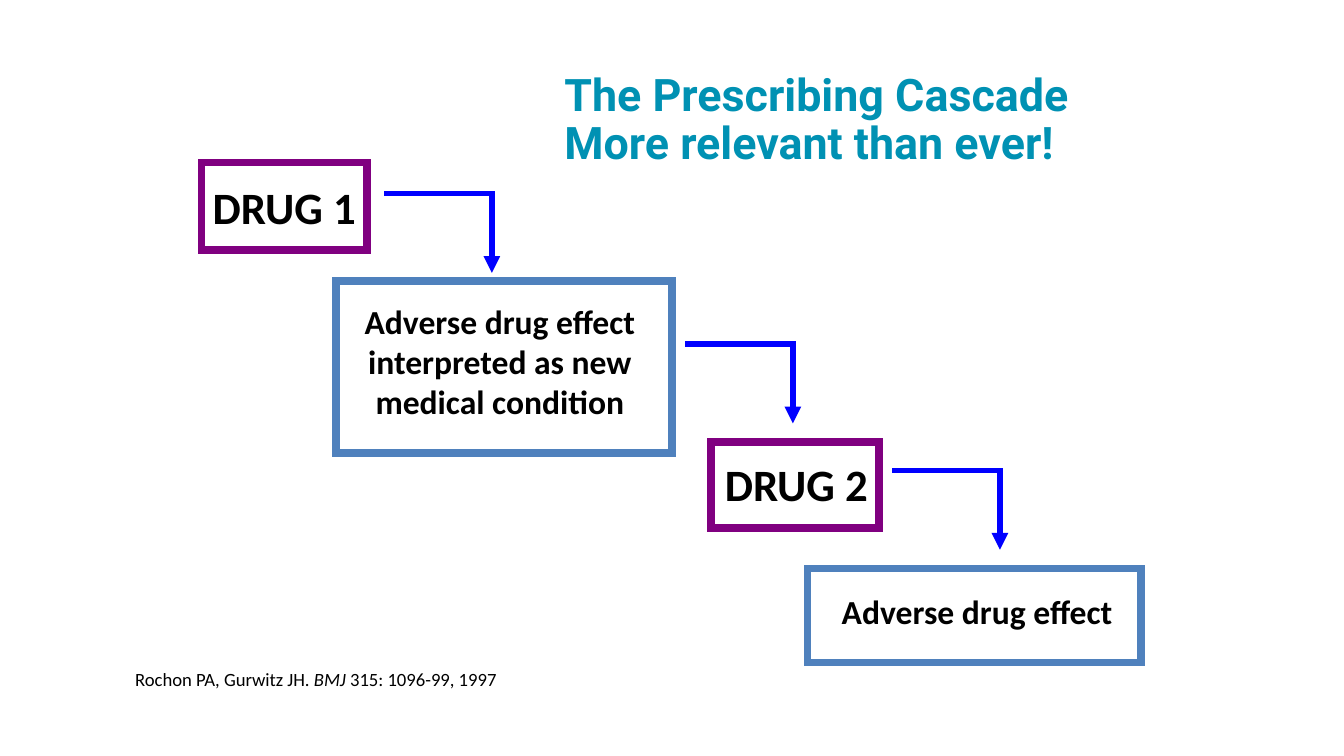
from lxml import etree
from pptx import Presentation, util as u
from pptx.dml.color import RGBColor
from pptx.enum import shapes, text
from pptx.oxml import ns

TEAL = RGBColor(0x00, 0x91, 0xB3)
PURPLE = RGBColor(0x80, 0x00, 0x80)
STEEL = RGBColor(0x4F, 0x81, 0xBD)
BLUE = RGBColor(0x00, 0x00, 0xFF)
BLACK = RGBColor(0x00, 0x00, 0x00)

TITLE = {"name": "Roboto", "size": u.Pt(24), "bold": True}
DRUG = {"name": "Calibri", "size": u.Pt(24), "bold": True}
EFFECT = {"name": "Calibri", "size": u.Pt(18), "bold": True}
CITATION = {"name": "Calibri", "size": u.Pt(10), "bold": False}


class CascadeSlide:
    """Holds the slide and the style of its frames, labels and arrows."""

    frame_width = u.Pt(4)
    arrow_width = u.Pt(3)
    arrow_size = (0.8, 0.59)
    text_frame = {
        "margin_left": 0, "margin_top": 0, "margin_right": 0, "margin_bottom": 0,
        "word_wrap": False,
        "auto_size": text.MSO_AUTO_SIZE.NONE,
        "vertical_anchor": text.MSO_ANCHOR.MIDDLE,
    }

    def __init__(self, slide):
        self.slide = slide

    def label(self, box, parts, style, color=BLACK, frame=None, layout=None):
        """Add text; parts are (words, italic) pairs."""
        shape = self.slide.shapes.add_textbox(*map(u.Inches, box))
        for name, value in {**self.text_frame, **(frame or {})}.items():
            setattr(shape.text_frame, name, value)
        paragraph = shape.text_frame.paragraphs[0]
        centred = {"alignment": text.PP_ALIGN.CENTER}
        for name, value in {**centred, **(layout or {})}.items():
            setattr(paragraph, name, value)
        for words, italic in parts:
            for number, line in enumerate(words.split("\n")):
                if number:
                    paragraph.add_line_break()
                run = paragraph.add_run()
                run.text = line
                for name, value in {**style, "italic": italic}.items():
                    setattr(run.font, name, value)
                run.font.color.rgb = color

    def outline(self, shape, color, width):
        """Give a shape or connector a solid line with sharp corners."""
        shape.line.color.rgb = color
        shape.line.width = width
        line = shape._element.spPr.find(ns.qn("a:ln"))
        etree.SubElement(line, ns.qn("a:miter"), lim="800000")
        return line

    def frame(self, box, color):
        shape = self.slide.shapes.add_shape(
            shapes.MSO_SHAPE.RECTANGLE, *map(u.Inches, box))
        shape.shadow.inherit = False
        shape.fill.background()
        self.outline(shape, color, self.frame_width)

    def arrow(self, left, top):
        """Add an arrow that runs right, then down."""
        width, height = self.arrow_size
        connector = self.slide.shapes.add_connector(
            shapes.MSO_CONNECTOR.ELBOW,
            *map(u.Inches, (left, top, left + width, top + height)))
        line = self.outline(connector, BLUE, self.arrow_width)
        etree.SubElement(line, ns.qn("a:tailEnd"), type="triangle")
        properties = connector._element.spPr
        properties.find(ns.qn("a:prstGeom")).set("prst", "bentConnector2")
        etree.SubElement(properties, ns.qn("a:effectLst"))


def main():
    presentation = Presentation()
    presentation.slide_width = u.Inches(10)
    presentation.slide_height = u.Inches(10) * 9 // 16
    cascade = CascadeSlide(
        presentation.slides.add_slide(presentation.slide_layouts[6]))

    # Title
    cascade.label(
        (4.2, 0.54, 6.47, 1.09),
        [("The Prescribing Cascade\nMore relevant than ever!", False)],
        TITLE, TEAL,
        frame={"word_wrap": True, "vertical_anchor": text.MSO_ANCHOR.TOP},
        layout={"alignment": text.PP_ALIGN.LEFT, "line_spacing": 0.9})

    # Steps of the cascade: frame, frame colour, label box, words, style
    steps = [
        ((1.5, 1.21, 1.23, 0.65), PURPLE, (1.53, 1.26, 1.17, 0.56),
         "DRUG 1", DRUG),
        ((2.5, 2.09, 2.5, 1.28), STEEL, (2.62, 2.09, 2.2, 1.19),
         "Adverse drug effect\ninterpreted as new\nmedical condition", EFFECT),
        ((5.29, 3.29, 1.25, 0.64), PURPLE, (5.34, 3.32, 1.17, 0.56),
         "DRUG 2", DRUG),
        ((6.01, 4.23, 2.48, 0.7), STEEL, (6.05, 4.24, 2.44, 0.62),
         "Adverse drug effect", EFFECT),
    ]
    for frame_box, color, label_box, words, style in steps:
        cascade.frame(frame_box, color)
        cascade.label(label_box, [(words, False)], style)

    # Arrows between the steps
    for left, top in [(2.86, 1.44), (5.1, 2.56), (6.64, 3.5)]:
        cascade.arrow(left, top)

    # Citation
    cascade.label(
        (0.88, 4.92, 2.94, 0.27),
        [("Rochon PA, Gurwitz JH. ", False), ("BMJ", True),
         (" 315: 1096-99, 1997", False)],
        CITATION)

    presentation.save("out.pptx")


if __name__ == "__main__":
    main()
